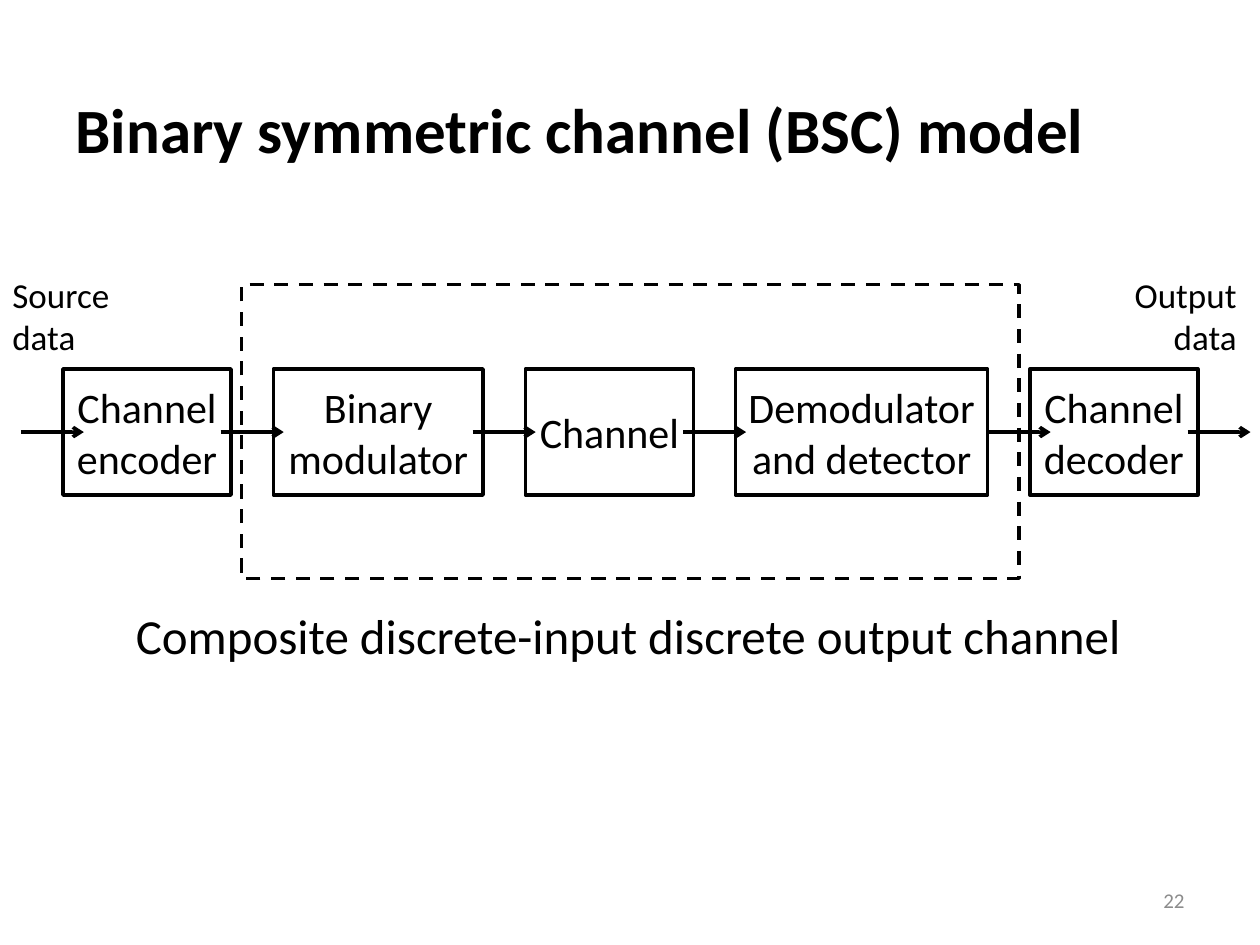
from dataclasses import dataclass

from lxml.etree import SubElement
from pptx import Presentation
from pptx.dml.color import RGBColor
from pptx.enum.dml import MSO_LINE
from pptx.enum.shapes import MSO_CONNECTOR, MSO_SHAPE
from pptx.enum.text import MSO_ANCHOR as Anchor, MSO_AUTO_SIZE as AutoSize, PP_ALIGN as Align
from pptx.oxml.ns import qn
from pptx.slide import Slide
from pptx.util import Cm, Pt

RIGHT_SIDE = 3


def color(hex_string):
    return RGBColor.from_string(hex_string)


@dataclass
class Diagram:
    slide: Slide
    font: str = "Calibri"
    ink: str = "000000"
    line_width: float = 2

    def add_text(self, paragraph, text, size, align=None, bold=False, ink=None):
        paragraph.alignment = align
        run = paragraph.add_run()
        run.text = text
        run.font.name = self.font
        run.font.size = Pt(size)
        run.font.bold = bold
        run.font.color.rgb = color(ink or self.ink)

    def stroke(self, line):
        line.color.rgb = color(self.ink)
        line.width = Pt(self.line_width)

    def heading(self, text, left, top, width, height):
        """Fill the body placeholder with one unbulleted line and drop the unused title."""
        title = self.slide.shapes.title
        title.element.getparent().remove(title.element)
        body = self.slide.placeholders[1]
        body.left, body.top, body.width, body.height = map(Cm, (left, top, width, height))
        paragraph = body.text_frame.paragraphs[0]
        properties = paragraph._p.get_or_add_pPr()
        properties.set("marL", str(Cm(0.95)))
        properties.set("indent", str(-Cm(0.95)))
        SubElement(properties, qn("a:buNone"))
        paragraph.space_before = Pt(0)
        self.add_text(paragraph, text, 36, bold=True)

    def box(self, left, top, width, height, text=None, dashed=False):
        box = self.slide.shapes.add_shape(
            MSO_SHAPE.RECTANGLE, Cm(left), Cm(top), Cm(width), Cm(height))
        box.shadow.inherit = False
        box.fill.background()
        self.stroke(box.line)
        if dashed:
            box.line.dash_style = MSO_LINE.DASH
        if text:
            box.text_frame.word_wrap = True
            box.text_frame.vertical_anchor = Anchor.MIDDLE
            self.add_text(box.text_frame.paragraphs[0], text, 24, Align.CENTER)
        return box

    def arrow(self, left, y, length, source=None):
        arrow = self.slide.shapes.add_connector(
            MSO_CONNECTOR.STRAIGHT, Cm(left), Cm(y), Cm(left + length), Cm(y))
        if source is not None:
            arrow.begin_connect(source, RIGHT_SIDE)
        self.stroke(arrow.line)
        SubElement(arrow.line._get_or_add_ln(), qn("a:tailEnd"), type="arrow")
        SubElement(arrow._element.spPr, qn("a:effectLst"))

    def label(self, text, left, top, width, height, size, align=Align.LEFT,
              anchor=Anchor.MIDDLE, wrap=True, ink=None):
        frame = self.slide.shapes.add_textbox(
            Cm(left), Cm(top), Cm(width), Cm(height)).text_frame
        frame.word_wrap = wrap
        frame.auto_size = AutoSize.NONE if wrap else AutoSize.SHAPE_TO_FIT_TEXT
        frame.vertical_anchor = anchor
        self.add_text(frame.paragraphs[0], text, size, align, ink=ink)


def main():
    deck = Presentation()
    deck.slide_width, deck.slide_height = Cm(25.4), Cm(19.05)
    diagram = Diagram(deck.slides.add_slide(deck.slide_layouts[1]))
    diagram.heading("Binary symmetric channel (BSC) model", 1.27, 1.7, 22.86, 15.32)

    stage_widths = {
        "Channel encoder": 3.39,
        "Binary modulator": 4.23,
        "Channel": 3.39,
        "Demodulator and detector": 5.08,
        "Channel decoder": 3.39,
    }
    stage_top, stage_height, gap = 7.44, 2.54, 0.85
    stages = {}
    stage_ends = {}
    left = 1.27
    for name, width in stage_widths.items():
        stages[name] = diagram.box(left, stage_top, width, stage_height, name)
        stage_ends[name] = left + width
        left += width + gap

    flow_y, flow_length, overlap = stage_top + stage_height / 2, 1.27, 0.21
    diagram.arrow(0.42, flow_y, flow_length)
    for name, end in stage_ends.items():
        if name == "Demodulator and detector":
            diagram.arrow(end, flow_y, flow_length, source=stages[name])
        else:
            diagram.arrow(end - overlap, flow_y, flow_length)

    diagram.label("Source data", 0, 5.31, 2.97, 2.11, 20)
    diagram.label("Output data", 22.43, 5.31, 2.75, 2.11, 20, Align.RIGHT)
    diagram.box(4.87, 5.74, 15.67, 5.92, dashed=True)
    diagram.label("Composite discrete-input discrete output channel",
                  2.49, 12.09, 20.6, 1.45, 28, anchor=Anchor.TOP, wrap=False)
    diagram.label("22", 18.2, 17.65, 5.93, 1.01, 12, Align.RIGHT, ink="8C8C8C")

    deck.save("out.pptx")


if __name__ == "__main__":
    main()
